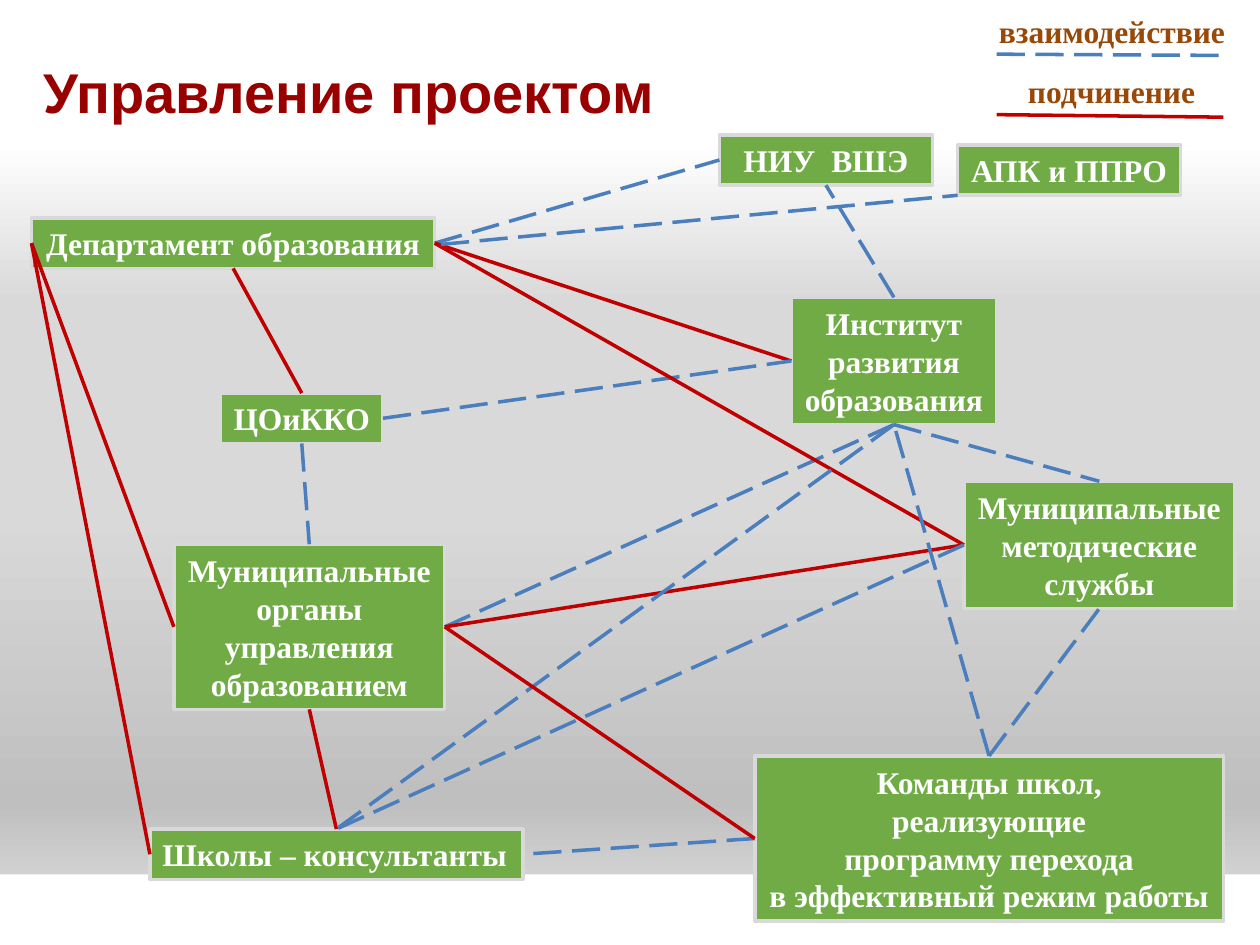
"""Build the project management slide with its links of cooperation and command."""
import pptx
import pptx.dml.color
import pptx.enum.dml
import pptx.enum.shapes
import pptx.enum.text
import pptx.oxml
import pptx.oxml.ns
import pptx.util
from lxml import etree

RGB = pptx.dml.color.RGBColor
WHITE = RGB(0xFF, 0xFF, 0xFF)
GREEN = RGB(0x70, 0xAB, 0x46)
GRAY = RGB(0xD9, 0xD9, 0xD9)
BLUE = RGB(0x4B, 0x7E, 0xBC)
RED = RGB(0xC0, 0x00, 0x00)
BROWN = RGB(0x98, 0x48, 0x07)
MAROON = RGB(0x99, 0x00, 0x00)
SILVER = RGB(0xBF, 0xBF, 0xBF)
PALE = RGB(0xE6, 0xE6, 0xE6)
SCALE = 9144
TOP, LEFT, BOTTOM, RIGHT = range(4)
ALIGN = pptx.enum.text.PP_ALIGN
RECT = pptx.enum.shapes.MSO_SHAPE.RECTANGLE
qn = pptx.oxml.ns.qn


def write(shape, text, color, align, size=18, font="Times New Roman"):
    frame = shape.text_frame
    for num, row in enumerate(text.split("\n")):
        para = frame.add_paragraph() if num else frame.paragraphs[0]
        para.alignment = align
        run = para.add_run()
        run.text = row
        run.font.name = font
        run.font.size = pptx.util.Pt(size)
        run.font.bold = True
        run.font.color.rgb = color
    return frame


def draw(ends, color):
    line = slide.shapes.add_connector(
        pptx.enum.shapes.MSO_CONNECTOR.STRAIGHT, *[n * SCALE for n in ends])
    line.line.color.rgb = color
    line.line.width = pptx.util.Pt(2)
    if color == BLUE:
        line.line.dash_style = pptx.enum.dml.MSO_LINE.LONG_DASH
    etree.SubElement(line._element.spPr, qn("a:effectLst"))
    return line


deck = pptx.Presentation()
deck.slide_width = 1000 * SCALE
deck.slide_height = 750 * SCALE
slide = deck.slides.add_slide(deck.slide_layouts[6])

fill = slide.background.fill
fill.gradient()
fill.gradient_angle = 270
stops = slide._element.find(".//" + qn("a:gsLst"))
for old in list(stops):
    stops.remove(old)
for place, color in [(0, WHITE), (15, WHITE), (32, GRAY), (54, GRAY), (85, SILVER), (100, PALE)]:
    stop = etree.SubElement(stops, qn("a:gs"), pos=str(place * 1000))
    etree.SubElement(stop, qn("a:srgbClr"), val=str(color))

band = slide.shapes.add_shape(RECT, 0, 694 * SCALE, 1000 * SCALE, 56 * SCALE)
band.shadow.inherit = False
band.fill.solid()
band.fill.fore_color.rgb = WHITE
band.line.fill.background()

nodes = {
    "dept": (25, 173, 320, 40, "Департамент образования"),
    "uni": (571, 107, 169, 40, "НИУ  ВШЭ"),
    "inst": (628, 236, 163, 101, "Институт\nразвития\nобразования"),
    "centre": (175, 312, 129, 40, "ЦОиККО"),
    "town": (138, 432, 215, 131, "Муниципальные\nорганы\nуправления\nобразованием"),
    "school": (119, 658, 296, 40, "Школы – консультанты"),
    "team": (599, 600, 372, 131,
             "Команды школ,\nреализующие\nпрограмму перехода\nв эффективный режим работы"),
    "method": (765, 382, 215, 101, "Муниципальные\nметодические\nслужбы"),
    "prof": (760, 115, 177, 40, "АПК и ППРО"),
}
boxes = {}
for name, (x, y, wide, high, text) in nodes.items():
    box = slide.shapes.add_shape(RECT, *[n * SCALE for n in (x, y, wide, high)])
    box.shadow.inherit = False
    box.fill.solid()
    box.fill.fore_color.rgb = GREEN
    box.line.color.rgb = GRAY
    box.line.width = pptx.util.Pt(2)
    frame = write(box, text, WHITE, ALIGN.LEFT if name == "school" else ALIGN.CENTER)
    frame.word_wrap = name == "uni"
    frame.auto_size = pptx.enum.text.MSO_AUTO_SIZE.SHAPE_TO_FIT_TEXT
    boxes[name] = box

links = [
    ("dept", RIGHT, "uni", LEFT, BLUE),
    ("inst", TOP, "uni", BOTTOM, BLUE),
    ("dept", RIGHT, "inst", LEFT, RED),
    ("dept", BOTTOM, "centre", TOP, RED),
    ("centre", RIGHT, "inst", LEFT, BLUE),
    ("centre", BOTTOM, "town", TOP, BLUE),
    ("inst", BOTTOM, "town", RIGHT, BLUE),
    ("dept", LEFT, "town", LEFT, RED),
    ("town", RIGHT, "method", LEFT, RED),
    ("inst", BOTTOM, "method", TOP, BLUE),
    ("dept", RIGHT, "method", LEFT, RED),
    ("dept", LEFT, "school", LEFT, RED),
    ("town", BOTTOM, "school", TOP, RED),
    ("method", LEFT, "school", TOP, BLUE),
    ("inst", BOTTOM, "school", TOP, BLUE),
    ("team", TOP, "method", BOTTOM, BLUE),
    ("team", LEFT, "school", RIGHT, BLUE),
    ("team", LEFT, "town", RIGHT, RED),
    ("team", TOP, "inst", BOTTOM, BLUE),
]
for start, side, end, edge, color in links:
    link = draw((0, 0, 0, 0), color)
    link.begin_connect(boxes[start], side)
    link.end_connect(boxes[end], edge)
draw((350, 194, 760, 155), BLUE)

title = slide.shapes.add_textbox(*[n * SCALE for n in (25, 34, 977, 71)])
frame = write(title, "Управление проектом", MAROON, ALIGN.LEFT, 32, "Arial")
frame.word_wrap = True
frame.vertical_anchor = pptx.enum.text.MSO_ANCHOR.MIDDLE
frame.paragraphs[0].line_spacing = 1.1

for x, y, wide, text, ends, color in [
    (783, 5, 201, "взаимодействие", (791, 43, 971, 44), BLUE),
    (806, 52, 154, "подчинение", (791, 91, 971, 93), RED),
]:
    draw(ends, color)
    label = slide.shapes.add_textbox(*[n * SCALE for n in (x, y, wide, 40)])
    frame = write(label, text, BROWN, ALIGN.LEFT)
    frame.word_wrap = False
    frame.auto_size = pptx.enum.text.MSO_AUTO_SIZE.SHAPE_TO_FIT_TEXT

deck.save("out.pptx")
